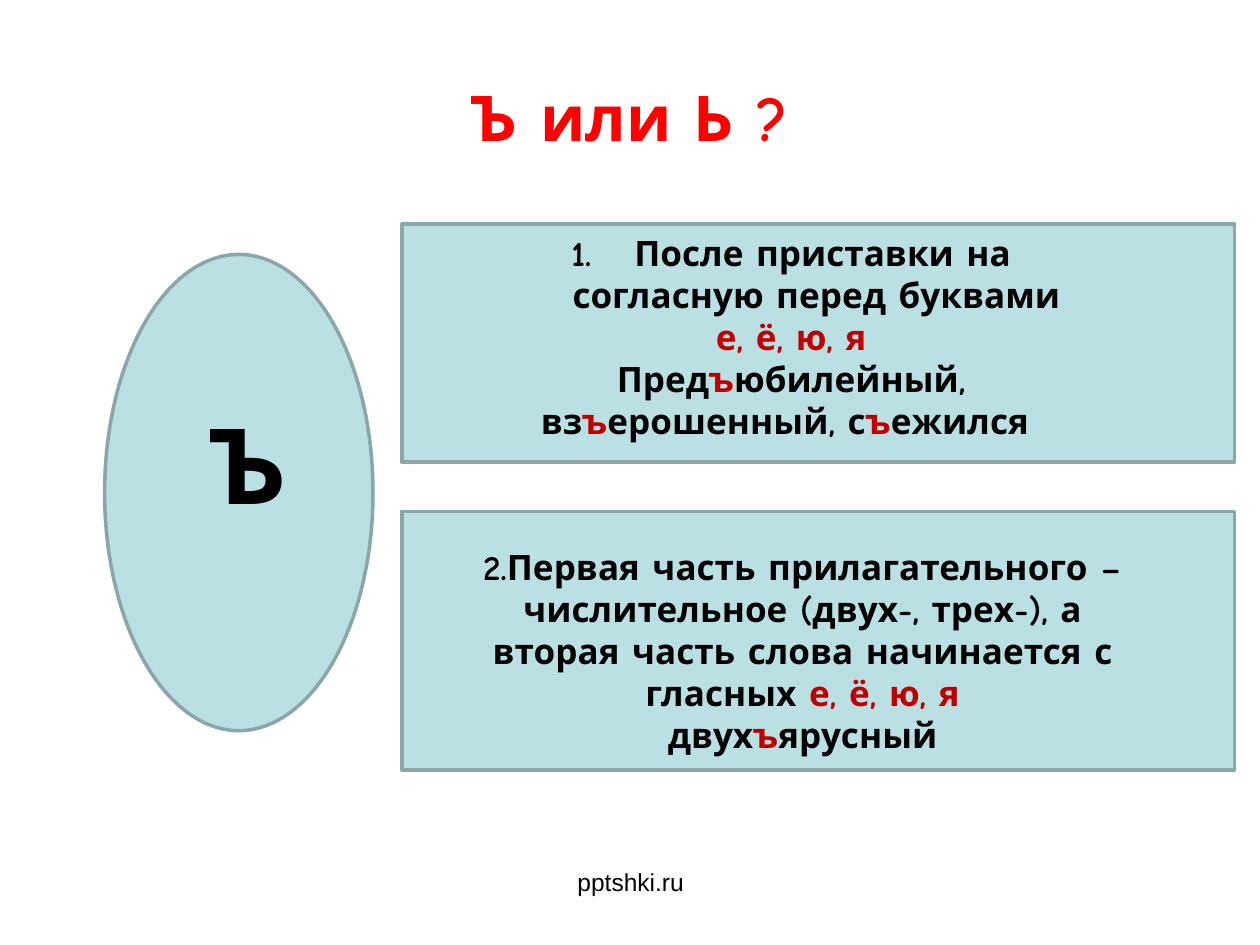
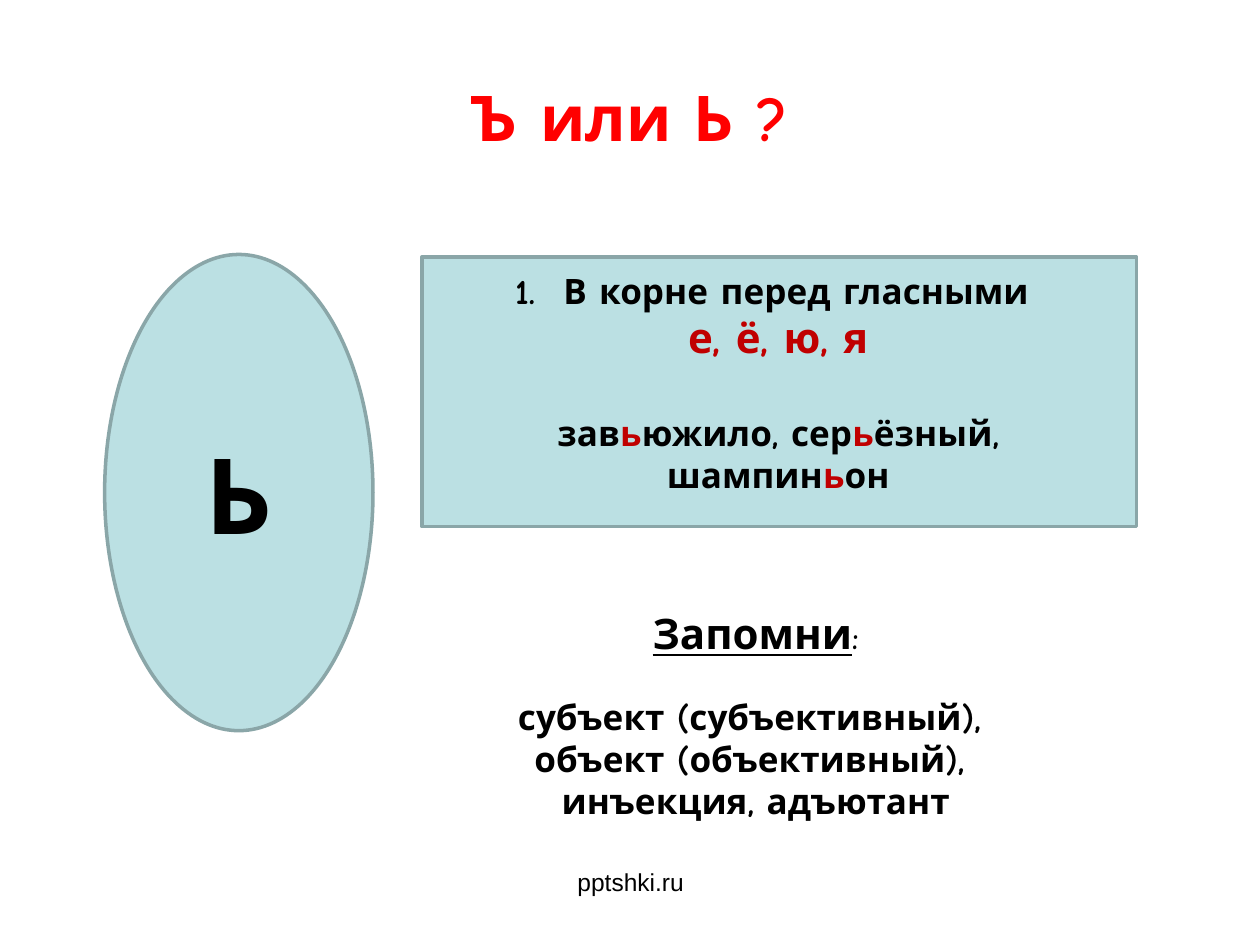
from lxml import etree
from pptx import Presentation
from pptx.dml.color import RGBColor
from pptx.enum.shapes import MSO_SHAPE as Shape
from pptx.enum.text import MSO_ANCHOR as Anchor, PP_ALIGN as Align
from pptx.oxml.ns import qn
from pptx.util import Cm, Pt

BLACK = RGBColor(0x00, 0x00, 0x00)
TITLE_RED = RGBColor(0xFF, 0x00, 0x00)
ACCENT_RED = RGBColor(0xC0, 0x00, 0x00)
PANEL_FILL = RGBColor(0xBB, 0xE0, 0xE3)
PANEL_LINE = RGBColor(0x8A, 0xA6, 0xA8)
MAIN_FONT = "Comic Neue"
FOOTER_FONT = "Arial"
BODY_SIZE = 20
SIGN_SIZE = 60


def add_panel(page, kind, left, top, width, height):
    """Add a pale blue outlined shape."""
    panel = page.shapes.add_shape(kind, Cm(left), Cm(top), Cm(width), Cm(height))
    panel.shadow.inherit = False
    panel.fill.solid()
    panel.fill.fore_color.rgb = PANEL_FILL
    panel.line.color.rgb = PANEL_LINE
    panel.line.width = Pt(2)
    return panel


def add_frame(page, left, top, width, height, anchor=Anchor.TOP):
    """Add a wrapping text box and return its text frame."""
    box = page.shapes.add_textbox(Cm(left), Cm(top), Cm(width), Cm(height))
    frame = box.text_frame
    frame.word_wrap = True
    frame.vertical_anchor = anchor
    return frame


def number_para(para, indent):
    """Give the paragraph an automatic number with a hanging indent."""
    props = para._p.get_or_add_pPr()
    props.set("marL", str(Cm(indent)))
    props.set("indent", str(-Cm(indent)))
    etree.SubElement(props, qn("a:buAutoNum"), type="arabicPeriod")


def write_line(frame, text, size=BODY_SIZE, color=BLACK, font=MAIN_FONT,
               bold=True, indent=None, before=None):
    """Write a centred paragraph; text between asterisks is accented."""
    para = frame.paragraphs[0]
    if para.runs:
        para = frame.add_paragraph()
    para.alignment = Align.CENTER
    if before:
        para.space_before = Pt(before)
    if indent:
        number_para(para, indent)
    para.font.name = font
    para.font.size = Pt(size)
    para.font.bold = bold
    para.font.color.rgb = color
    for index, part in enumerate(text.split("*")):
        if part:
            span = para.add_run()
            span.text = part
            if index % 2:
                span.font.color.rgb = ACCENT_RED
    return para


def add_page(deck):
    """Add a page with the shared title, oval and footer; return page and oval."""
    page = deck.slides.add_slide(deck.slide_layouts[6])
    title = add_frame(page, 1.27, 0.76, 22.86, 3.18, Anchor.MIDDLE)
    write_line(title, "Ъ или Ь ?", 36, TITLE_RED)
    oval = add_panel(page, Shape.OVAL, 2.11, 5.13, 5.41, 9.6)
    footer = add_frame(page, 8.69, 17.35, 8.05, 1.32)
    write_line(footer, "pptshki.ru", 14, font=FOOTER_FONT, bold=False)
    return page, oval


def build_hard_sign(deck):
    """Build the page with the two rules for the hard sign."""
    page, _ = add_page(deck)
    write_line(add_frame(page, 3.71, 7.92, 2.59, 2.82), "Ъ", SIGN_SIZE)

    add_panel(page, Shape.RECTANGLE, 8.1, 4.52, 16.79, 4.8)
    prefixes = add_frame(page, 9.45, 4.55, 13, 4.52)
    write_line(prefixes, "После приставки на согласную перед буквами ", indent=1.27)
    write_line(prefixes, "*е, ё, ю, я*")
    write_line(prefixes, "Пред*ъ*юбилейный, вз*ъ*ерошенный, с*ъ*ежился ")

    add_panel(page, Shape.RECTANGLE, 8.1, 10.31, 16.79, 5.21)
    numerals = add_frame(page, 9.45, 10.87, 13.46, 6.25)
    write_line(numerals, "2.Первая часть прилагательного – числительное (двух-, трех-), "
                         "а вторая часть слова начинается с гласных *е, ё, ю, я*")
    write_line(numerals, "двух*ъ*ярусный")


def build_soft_sign(deck):
    """Build the page with the soft sign rule and the words to remember."""
    page, oval = add_page(deck)
    oval.text_frame.vertical_anchor = Anchor.MIDDLE
    write_line(oval.text_frame, "Ь", SIGN_SIZE)

    add_panel(page, Shape.RECTANGLE, 8.51, 5.18, 14.4, 5.44)
    roots = add_frame(page, 9.19, 5.31, 13, 5.64)
    write_line(roots, "В корне перед гласными ", indent=0.97)
    write_line(roots, "*е, ё, ю, я*", 24)
    write_line(roots, "зав*ь*южило, сер*ь*ёзный, шампин*ь*он", before=28)

    remember = add_frame(page, 9.19, 12.12, 12.09, 4.62)
    heading = write_line(remember, "Запомни", 24)
    heading.runs[0].font.underline = True
    colon = heading.add_run()
    colon.text = ":"
    colon.font.size = Pt(18)
    write_line(remember, "субъект (субъективный), ", before=21.5)
    write_line(remember, "объект (объективный), ")
    write_line(remember, "инъекция, адъютант")


def main():
    """Build and save the deck."""
    deck = Presentation()
    deck.slide_width, deck.slide_height = Cm(25.4), Cm(19.05)
    build_hard_sign(deck)
    build_soft_sign(deck)
    deck.save("out.pptx")


if __name__ == "__main__":
    main()
